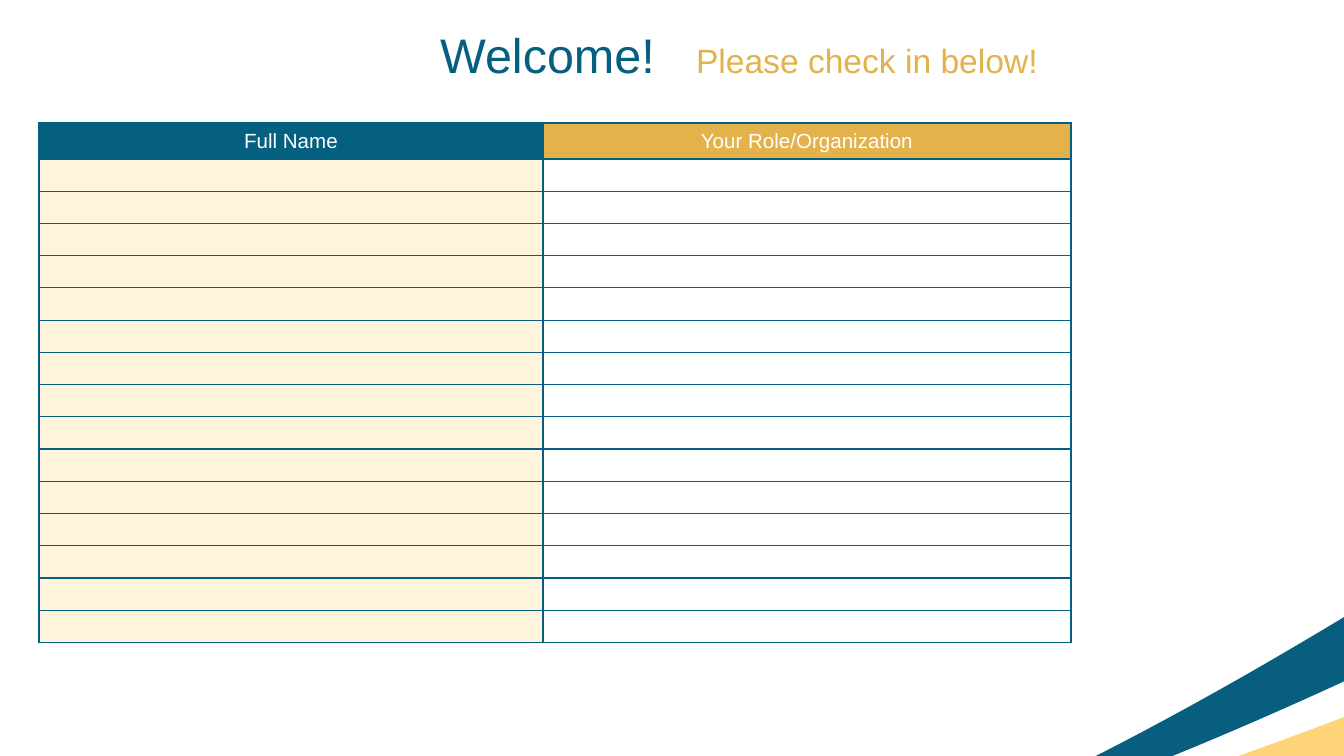
from pptx import Presentation
from pptx.dml.color import RGBColor
from pptx.enum.text import MSO_ANCHOR as Anchor, MSO_AUTO_SIZE as AutoSize, PP_ALIGN as Align
from pptx.oxml.xmlchemy import OxmlElement as Element
from pptx.util import Pt

SCALE = 914400 / 134.4
TEAL, GOLD, CREAM, WHITE = "055F7F", "E3B24A", "FFF4DB", "FFFFFF"

GREETING = [("Welcome!\t", 26, TEAL), ("Please check in below!", 18, GOLD)]
GREETING_BOX = (427, 12, 664, 91)
PROMPT_TAB = 256

HEADERS = [("Full Name", TEAL), ("Your Role/Organization", GOLD)]
ROW_FILLS = [CREAM, WHITE]
ENTRY_ROWS = 15
TABLE_LEFT, TABLE_TOP = 39, 123
COLUMN_WIDTHS = [504, 134, 394]
HEADER_HEIGHT, TABLE_HEIGHT = 36, 520

SWOOSHES = [
    ("075E7F", (843, 868), [
        [(1058, 788), (1259, 672), (1453, 550)],
        [(1472, 569), (1481, 591), (1484, 616)],
        [(1482, 616)],
        [(1277, 716), (1064, 810), (843, 868)]]),
    ("FFD478", (1461, 671), [
        [(1286, 742), (1109, 806), (926, 851)],
        [(879, 862), (832, 872), (785, 880)],
        [(1357, 880)],
        [(1383, 870), (1406, 857), (1427, 840)],
        [(1477, 800), (1499, 723), (1461, 671)]]),
]


def px(length):
    return round(length * SCALE)


def color(value):
    return RGBColor.from_string(value)


def add_text(paragraph, text, size=11, fill=WHITE, align=Align.LEFT):
    paragraph.alignment = align
    run = paragraph.add_run()
    run.text = text
    run.font.name = "Arial"
    run.font.size = Pt(size)
    run.font.color.rgb = color(fill)


def bend_segments(shape, segments):
    lines = iter(shape._element.xpath(".//a:lnTo"))
    for segment in segments:
        group = [next(lines) for _ in segment]
        if len(group) == 3:
            bezier = Element("a:cubicBezTo")
            group[0].addprevious(bezier)
            for line in group:
                bezier.append(line[0])
                line.getparent().remove(line)


def add_swoosh(slide, fill, start, segments):
    builder = slide.shapes.build_freeform(px(start[0]), px(start[1]))
    builder.add_line_segments([(px(x), px(y)) for segment in segments for x, y in segment])
    shape = builder.convert_to_shape()
    bend_segments(shape, segments)
    shape.shadow.inherit = False
    shape.fill.solid()
    shape.fill.fore_color.rgb = color(fill)
    shape.line.fill.background()


def add_greeting(slide):
    title = slide.shapes.title
    title.left, title.top, title.width, title.height = map(px, GREETING_BOX)
    frame = title.text_frame
    frame.word_wrap = True
    frame.auto_size = AutoSize.NONE
    frame.vertical_anchor = Anchor.TOP
    frame.margin_left = frame.margin_top = frame.margin_right = frame.margin_bottom = px(13)
    paragraph = frame.paragraphs[0]
    stops = Element("a:tabLst")
    stop = Element("a:tab")
    stop.set("pos", str(px(PROMPT_TAB)))
    stop.set("algn", "l")
    stops.append(stop)
    paragraph._p.get_or_add_pPr().append(stops)
    for text, size, fill in GREETING:
        add_text(paragraph, text, size=size, fill=fill)


def format_cell(cell, fill, border):
    properties = cell._tc.get_or_add_tcPr()
    for side in ("lnL", "lnR", "lnT", "lnB"):
        line = Element(f"a:{side}")
        line.set("w", str(Pt(0.75 if side == "lnB" else border)))
        solid = Element("a:solidFill")
        shade = Element("a:srgbClr")
        shade.set("val", TEAL)
        solid.append(shade)
        line.append(solid)
        properties.append(line)
    cell.fill.solid()
    cell.fill.fore_color.rgb = color(fill)
    cell.margin_left = cell.margin_top = cell.margin_right = cell.margin_bottom = px(6)
    cell.vertical_anchor = Anchor.MIDDLE


def add_sign_in_table(slide):
    table = slide.shapes.add_table(
        ENTRY_ROWS + 1, len(COLUMN_WIDTHS), px(TABLE_LEFT), px(TABLE_TOP),
        px(sum(COLUMN_WIDTHS)), px(TABLE_HEIGHT)).table
    table.first_row = table.horz_banding = False
    for column, width in zip(table.columns, COLUMN_WIDTHS):
        column.width = px(width)
    entry_height = (TABLE_HEIGHT - HEADER_HEIGHT) / ENTRY_ROWS
    for index, row in enumerate(table.rows):
        is_header = index == 0
        row.height = px(HEADER_HEIGHT if is_header else entry_height)
        fills = [fill for _, fill in HEADERS] if is_header else ROW_FILLS
        for column, cell in enumerate(row.cells):
            format_cell(cell, fills[min(column, 1)], border=1 if is_header else 0.75)
            if not is_header:
                end = Element("a:endParaRPr")
                end.set("sz", "800")
                cell.text_frame.paragraphs[0]._p.append(end)
        table.cell(index, 1).merge(table.cell(index, 2))
    for column, (text, _) in enumerate(HEADERS):
        add_text(table.cell(0, column).text_frame.paragraphs[0], text, align=Align.CENTER)


def main():
    presentation = Presentation()
    presentation.slide_width, presentation.slide_height = px(1344), px(756)
    slide = presentation.slides.add_slide(presentation.slide_layouts[5])
    for swoosh in SWOOSHES:
        add_swoosh(slide, *swoosh)
    add_sign_in_table(slide)
    add_greeting(slide)
    presentation.save("out.pptx")


if __name__ == "__main__":
    main()
